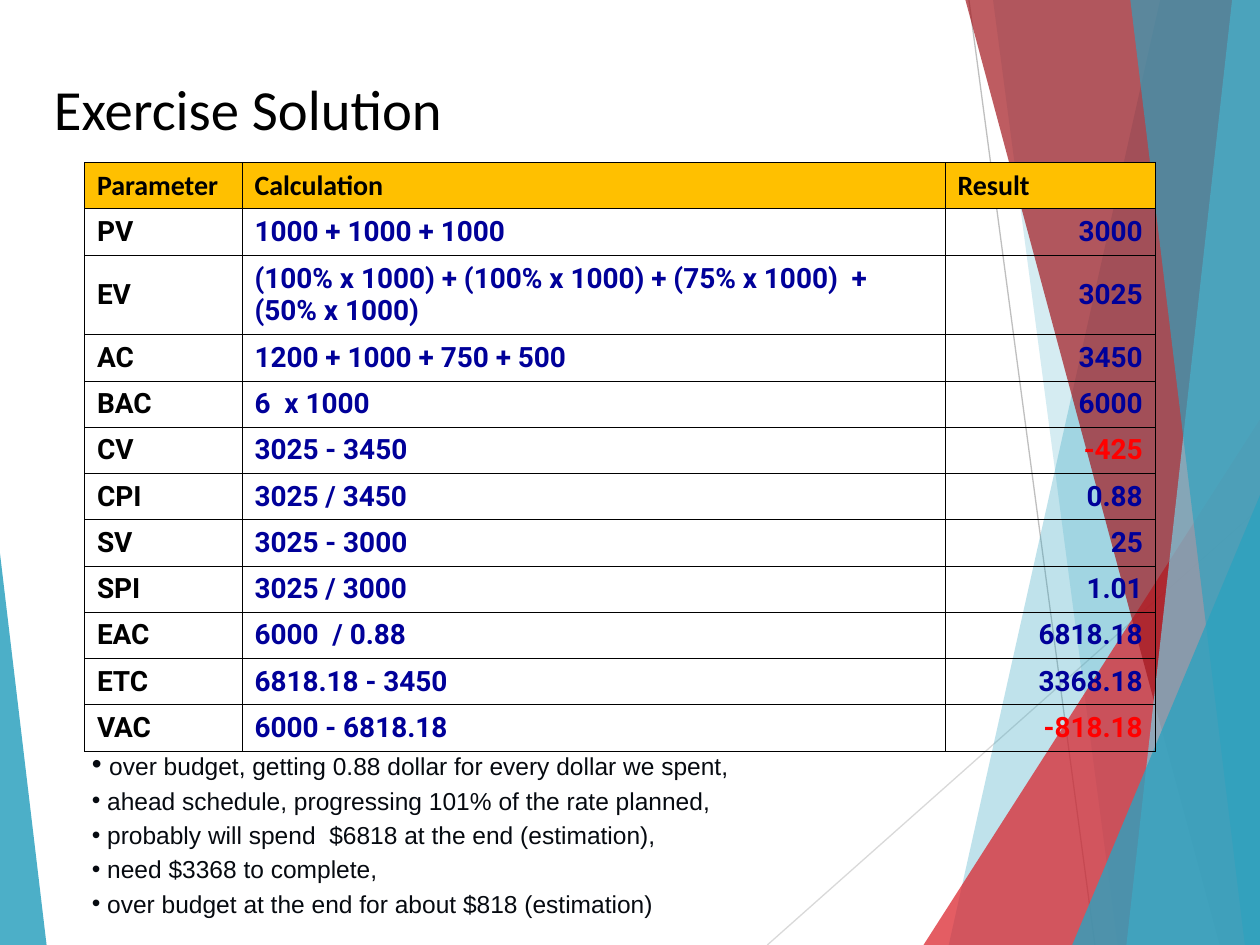
"""Build the exercise solution slide: ribbon backdrop, earned value table and conclusions."""
from lxml.etree import SubElement
from pptx import Presentation
from pptx.dml.color import RGBColor
from pptx.enum.shapes import MSO_CONNECTOR, MSO_SHAPE
from pptx.enum.text import MSO_ANCHOR, PP_ALIGN
from pptx.oxml.ns import qn
from pptx.util import Inches, Pt

BLACK, NAVY, RED, AMBER, TEAL = "000000", "000099", "FF0000", "FFC000", "2DA2BF"
COLUMNS, ROWS = 100, 75

deck = Presentation()
deck.slide_width, deck.slide_height = Inches(10), Inches(7.5)
slide = deck.slides.add_slide(deck.slide_layouts[6])
shapes = slide.shapes
cell_size = deck.slide_width / COLUMNS


def grid(*cells):
    return [round(cell_size * cell) for cell in cells]


def paint(fill, colour, opacity=100):
    fill.solid()
    fill.fore_color.rgb = RGBColor.from_string(colour)
    if opacity < 100:
        tint = fill._xPr.find(qn("a:solidFill")).find(qn("a:srgbClr"))
        SubElement(tint, qn("a:alpha"), val=str(opacity * 1000))


for ends, colour in [((76.9, 0, 86.9, ROWS), "BFBFBF"),
                     ((COLUMNS, 40.3, 60.9, ROWS), "D9D9D9")]:
    ray = shapes.add_connector(MSO_CONNECTOR.STRAIGHT, *grid(*ends))
    ray.line.width = Pt(0.75)
    paint(ray.line.fill, colour)
    SubElement(ray._element.spPr, qn("a:effectLst"))

# Ribbons hold top and bottom columns; wedges hold left, top, width and apex.
backdrop = [
    ("ribbon", (92.1, 75.3), TEAL, 30),
    ("ribbon", (78.8, 88.7), TEAL, 20),
    ("wedge", (73.3, 33.3, 26.7, 1), "DA1F28", 72),
    ("ribbon", (76.6, 96.8), "A3171E", 70),
    ("ribbon", (97.8, 89.4), "7ACBE0", 70),
    ("ribbon", (89.7, 98.8), TEAL, 65),
    ("wedge", (85.1, 39.3, 14.9, 1), TEAL, 80),
    ("wedge", (0, 43.9, 3.7, 0), TEAL, 85),
]
for kind, measures, colour, opacity in backdrop:
    if kind == "ribbon":
        upper, lower = measures
        outline = shapes.build_freeform(*grid(upper, -0.1))
        outline.add_line_segments([grid(COLUMNS, -0.1), grid(COLUMNS, ROWS), grid(lower, ROWS)])
        facet = outline.convert_to_shape()
    else:
        left, top, width, apex = measures
        facet = shapes.add_shape(MSO_SHAPE.ISOSCELES_TRIANGLE,
                                 *grid(left, top, width, ROWS - top))
        facet.adjustments[0] = apex
    facet.shadow.inherit = False
    facet.line.fill.background()
    paint(facet.fill, colour, opacity)

heading = shapes.add_textbox(*grid(3.3, 5.4, 83.3, 4.2)).text_frame
heading.word_wrap = True
wording = [(heading.paragraphs[0], "Exercise Solution", "Calibri", 32.4, BLACK, False)]

results = [
    ("Parameter", "Calculation", "Result"),
    ("PV", "1000 + 1000 + 1000", "3000"),
    ("EV", "(100% x 1000) + (100% x 1000) + (75% x 1000)  + (50% x 1000)", "3025"),
    ("AC", "1200 + 1000 + 750 + 500", "3450"),
    ("BAC", "6  x 1000", "6000"),
    ("CV", "3025 - 3450", "-425"),
    ("CPI", "3025 / 3450", "0.88"),
    ("SV", "3025 - 3000", "25"),
    ("SPI", "3025 / 3000", "1.01"),
    ("EAC", "6000  / 0.88", "6818.18"),
    ("ETC", "6818.18 - 3450", "3368.18"),
    ("VAC", "6000 - 6818.18", "-818.18"),
]
table_frame = shapes.add_table(len(results), 3, *grid(6.7, 12.9, 85, 44))
table = table_frame.table
table.first_row = table.horz_banding = False
for column, width in zip(table.columns, grid(12.5, 55.8, 16.7)):
    column.width = width
for number, entries in enumerate(results):
    is_header = number == 0
    table.rows[number].height = grid(3.3 if is_header else 3.1)[0]
    for position, entry in enumerate(entries):
        cell = table.cell(number, position)
        cell.vertical_anchor = MSO_ANCHOR.MIDDLE
        for side in ("lnL", "lnR", "lnT", "lnB"):
            border = SubElement(cell._tc.get_or_add_tcPr(), qn(f"a:{side}"), w=str(Pt(0.5)))
            SubElement(SubElement(border, qn("a:solidFill")), qn("a:srgbClr"), val=BLACK)
        if is_header:
            paint(cell.fill, AMBER)
        else:
            cell.fill.background()
        entry_line = cell.text_frame.paragraphs[0]
        if position == 2 and not is_header:
            entry_line.alignment = PP_ALIGN.RIGHT
        colour = BLACK if is_header or position == 0 else RED if entry[0] == "-" else NAVY
        typeface = "Calibri" if is_header else "Roboto"
        wording.append((entry_line, entry, typeface, 16, colour, True))
table_frame.height = grid(44)[0]

conclusions = [
    [(" ", 16), ("over budget, getting 0.88 dollar for every dollar we spent,", 14)],
    [(" ahead schedule, progressing 101% of the rate planned,", 14)],
    [(" probably will spend  $6818 at the end (estimation),", 14)],
    [(" need $3368 to complete,", 14)],
    [(" over budget at the end for about $818 (estimation)", 14)],
]
summary = shapes.add_textbox(*grid(2.5, 58.8, 87.5, 14.2)).text_frame
summary.word_wrap = True
for number, parts in enumerate(conclusions):
    point = summary.add_paragraph() if number else summary.paragraphs[0]
    layout = point._p.get_or_add_pPr()
    layout.set("marL", str(grid(3.8)[0]))
    layout.set("indent", "0")
    SubElement(SubElement(layout, qn("a:spcBef")), qn("a:spcPct"), val="20000")
    SubElement(layout, qn("a:buFont"), typeface="Arial")
    SubElement(layout, qn("a:buChar"), char="•")
    wording += [(point, text, "Arial", size, "060A10", False) for text, size in parts]

for paragraph, text, typeface, size, colour, bold in wording:
    run = paragraph.add_run()
    run.text = text
    run.font.name, run.font.size, run.font.bold = typeface, Pt(size), bold
    paint(run.font.fill, colour)

deck.save("out.pptx")
